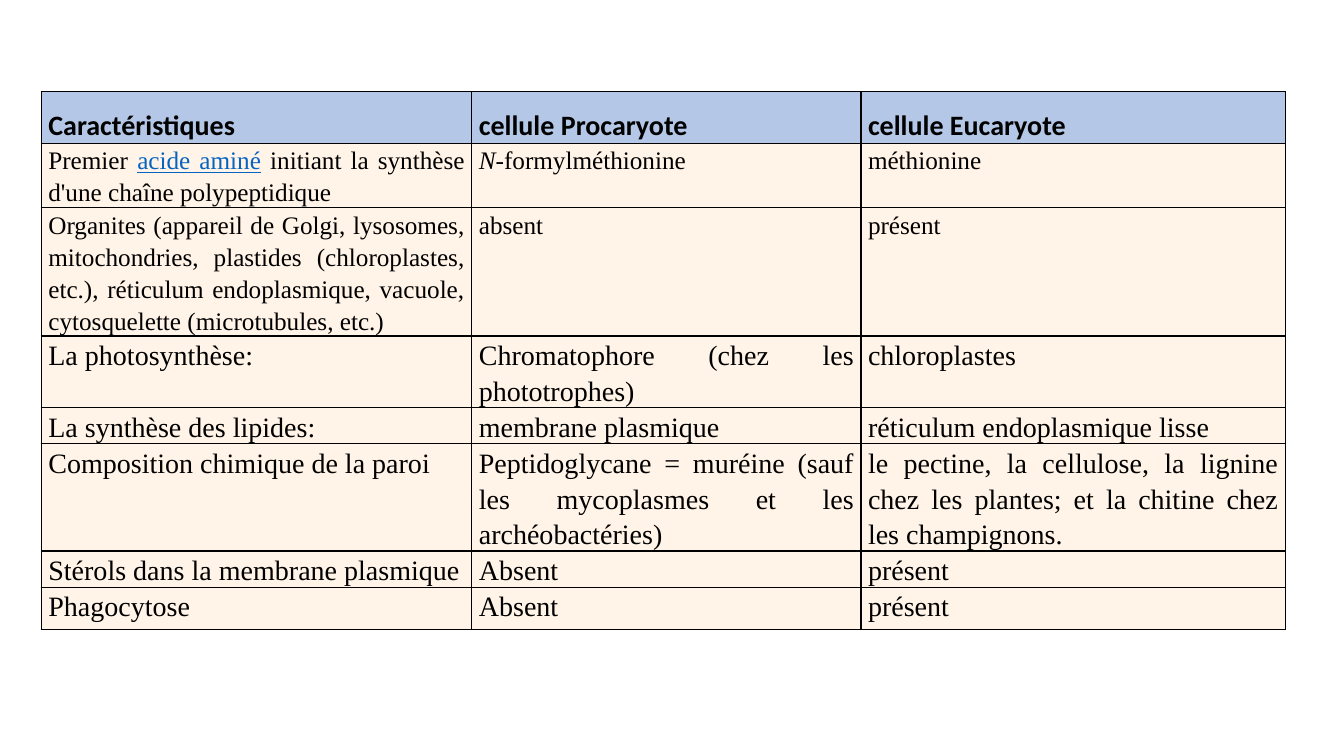
"""Build a slide with a table comparing prokaryotic and eukaryotic cells."""
from lxml import etree
from pptx import Presentation
from pptx.dml.color import RGBColor
from pptx.enum.text import PP_ALIGN
from pptx.oxml.ns import qn
from pptx.util import Inches, Pt

JUSTIFY = PP_ALIGN.JUSTIFY
BLACK, LINK_BLUE, HEADER_BLUE, CREAM = "000000", "0563C1", "B4C7E7", "FFF4E7"
LINK = {"color": LINK_BLUE, "underline": True}
ITALIC = {"italic": True}
HEADER = {"font": "Calibri", "size": 20, "bold": True, "spacing": 1.5}
SMALL = {"size": 18}
LARGE = {"size": 20}

COLUMN_WIDTHS = [4.27, 3.86, 4.21]
LEFT, TOP = 0.41, 0.91
ROWS = [
    (0.51, HEADER_BLUE, HEADER,
     ["Caractéristiques", "cellule Procaryote", "cellule Eucaryote"]),
    (0.64, CREAM, SMALL,
     [[("Premier ", {}), ("acide aminé", LINK),
       (" initiant la synthèse d'une chaîne polypeptidique", {})],
      [("N", ITALIC), ("-formylméthionine", {})],
      "méthionine"]),
    (1.27, CREAM, SMALL,
     ["Organites (appareil de Golgi, lysosomes, mitochondries, plastides "
      "(chloroplastes, etc.), réticulum endoplasmique, vacuole, "
      "cytosquelette (microtubules, etc.)",
      "absent", "présent"]),
    (0.7, CREAM, LARGE,
     ["La photosynthèse:", "Chromatophore (chez les phototrophes)", "chloroplastes"]),
    (0.36, CREAM, LARGE,
     ["La synthèse des lipides:", "membrane plasmique", "réticulum endoplasmique lisse"]),
    (1.06, CREAM, LARGE,
     ["Composition chimique de la paroi",
      "Peptidoglycane = muréine (sauf les mycoplasmes et les archéobactéries)",
      "le pectine, la cellulose, la lignine chez les plantes; "
      "et la chitine chez les champignons."]),
    (0.36, CREAM, LARGE,
     ["Stérols dans la membrane plasmique", "Absent", "présent"]),
    (0.42, CREAM, LARGE,
     ["Phagocytose", "Absent", "présent"]),
]


def rgb(value):
    return RGBColor.from_string(value)


def add_run(paragraph, text, size, font="Times New Roman", color=BLACK,
            bold=False, italic=False, underline=False):
    run = paragraph.add_run()
    run.text = text
    run.font.name = font
    run.font.size = Pt(size)
    run.font.bold = bold
    run.font.italic = italic
    run.font.underline = underline
    run.font.color.rgb = rgb(color)


def write_cell(cell, content, spacing=1.15, **text_format):
    cell.margin_left = cell.margin_right = Inches(0.07)
    cell.margin_top = cell.margin_bottom = 0
    paragraph = cell.text_frame.paragraphs[0]
    paragraph.alignment = JUSTIFY
    paragraph.line_spacing = spacing
    runs = [(content, {})] if isinstance(content, str) else content
    for text, changes in runs:
        add_run(paragraph, text, **{**text_format, **changes})


def add_borders(cell, color=BLACK, width=1):
    properties = cell._tc.get_or_add_tcPr()
    for side in ("a:lnL", "a:lnR", "a:lnT", "a:lnB"):
        line = etree.SubElement(properties, qn(side), w=str(Pt(width)))
        fill = etree.SubElement(line, qn("a:solidFill"))
        etree.SubElement(fill, qn("a:srgbClr"), val=color)


def add_comparison_table(slide):
    height = sum(row[0] for row in ROWS)
    frame = slide.shapes.add_table(
        len(ROWS), len(COLUMN_WIDTHS), Inches(LEFT), Inches(TOP),
        Inches(sum(COLUMN_WIDTHS)), Inches(height))
    table = frame.table
    table.first_row = table.horz_banding = False
    for column, width in zip(table.columns, COLUMN_WIDTHS):
        column.width = Inches(width)
    for row, (row_height, fill, text_format, contents) in zip(table.rows, ROWS):
        row.height = Inches(row_height)
        for cell, content in zip(row.cells, contents):
            write_cell(cell, content, **text_format)
            add_borders(cell)
            cell.fill.solid()
            cell.fill.fore_color.rgb = rgb(fill)


def main():
    presentation = Presentation()
    presentation.slide_width = Inches(13.33)
    presentation.slide_height = Inches(7.5)
    slide = presentation.slides.add_slide(presentation.slide_layouts[6])
    add_comparison_table(slide)
    presentation.save("out.pptx")


if __name__ == "__main__":
    main()
